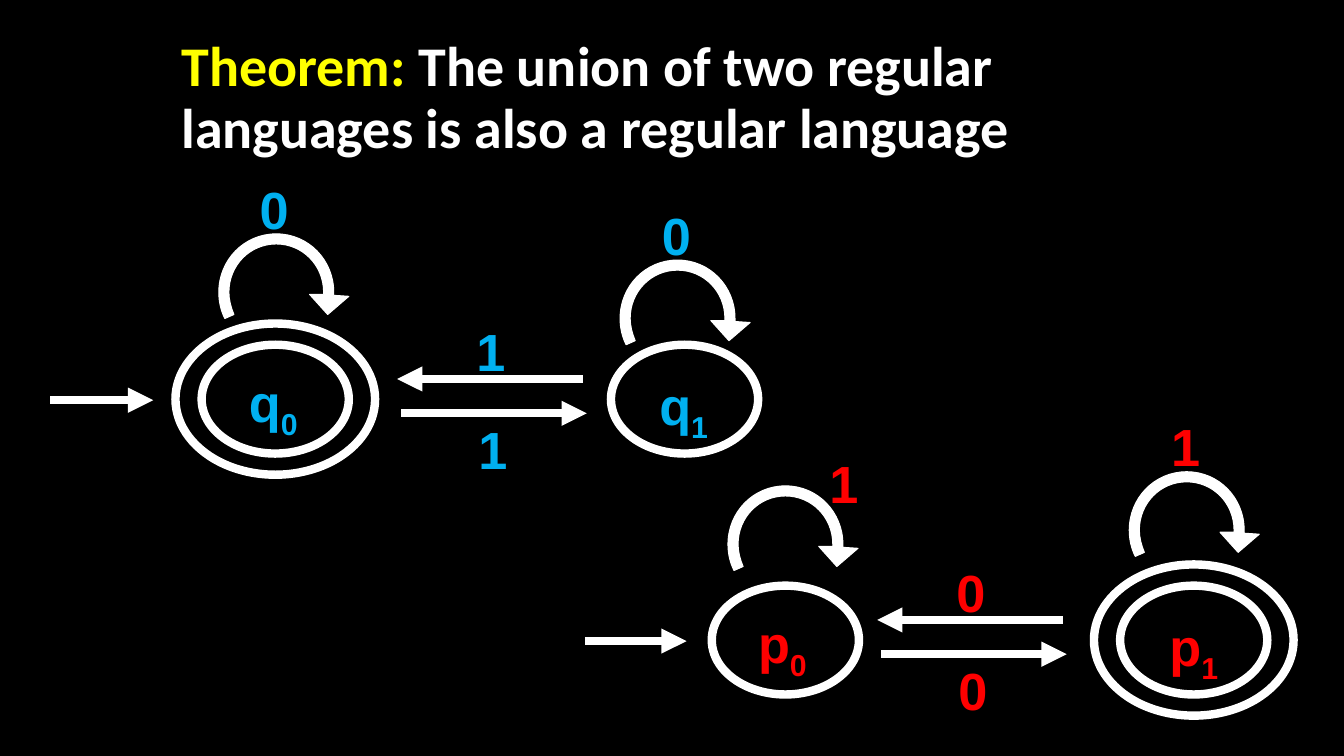
from lxml.etree import SubElement
from pptx import Presentation
from pptx.dml.color import RGBColor
from pptx.enum.shapes import MSO_CONNECTOR, MSO_SHAPE
from pptx.enum.text import MSO_AUTO_SIZE, PP_ALIGN
from pptx.oxml.ns import qn
from pptx.util import Pt

PX = 9144  # 100 px to the inch
THEME = {
    "background": RGBColor(0x00, 0x00, 0x00),
    "ink": RGBColor(0xFF, 0xFF, 0xFF),
    "accent": RGBColor(0xFF, 0xFF, 0x00),
    "q": RGBColor(0x00, 0xB0, 0xF0),
    "p": RGBColor(0xFF, 0x00, 0x00),
    "title_font": "Calibri",
    "label_font": "Arial",
    "title_size": Pt(40),
    "label_size": Pt(37.3),
    "stroke": Pt(6),
    "loop_stroke": Pt(0.75),
}

presentation = Presentation()
presentation.slide_width = 1333 * PX
presentation.slide_height = 750 * PX
slide = presentation.slides.add_slide(presentation.slide_layouts[6])
slide.background.fill.solid()
slide.background.fill.fore_color.rgb = THEME["background"]


def add_text(shapes, text, left, top, width, height=72, color=THEME["ink"],
             lead="", lead_color=None, subscript=False,
             font=THEME["label_font"], size=THEME["label_size"],
             align=PP_ALIGN.CENTER, wrap=False):
    """Add a text box; lead is a first run, and subscript lowers the text after it."""
    box = shapes.add_textbox(left * PX, top * PX, width * PX, height * PX)
    frame = box.text_frame
    frame.word_wrap = wrap
    frame.auto_size = MSO_AUTO_SIZE.SHAPE_TO_FIT_TEXT
    frame.margin_left = frame.margin_right = 13 * PX
    frame.margin_top = frame.margin_bottom = 7 * PX
    paragraph = frame.paragraphs[0]
    paragraph.alignment = align
    paragraph.line_spacing = 0.93
    for words, shade in ((lead, lead_color or color), (text, color)):
        if words:
            run = paragraph.add_run()
            run.text = words
            run.font.name = font
            run.font.size = size
            run.font.bold = True
            run.font.color.rgb = shade
    if subscript:
        run._r.get_or_add_rPr().set("baseline", "-25000")


def add_arrow(shapes, start_x, end_x, y):
    arrow = shapes.add_connector(
        MSO_CONNECTOR.STRAIGHT, start_x * PX, y * PX, end_x * PX, y * PX)
    arrow.line.color.rgb = THEME["ink"]
    arrow.line.width = THEME["stroke"]
    SubElement(arrow.line._get_or_add_ln(), qn("a:tailEnd"), type="triangle")
    SubElement(arrow._element.spPr, qn("a:effectLst"))


add_text(slide.shapes,
         " The union of two regular languages is also a regular language",
         167, 29, 970, 139, lead="Theorem:", lead_color=THEME["accent"],
         font=THEME["title_font"], size=THEME["title_size"],
         align=PP_ALIGN.LEFT, wrap=True)

# Self-loop outline: one point is a straight line, three points are a curve
LOOP_SIZE = 115
LOOP_START = (104, 60)
LOOP_SEGMENTS = [
    [(104, 59), (104, 59), (104, 58)],
    [(104, 31), (83, 10), (57, 10)],
    [(31, 10), (10, 31), (10, 58)],
    [(10, 65), (12, 73), (15, 80)],
    [(6, 84)],
    [(2, 76), (0, 67), (0, 58)],
    [(0, 26), (25, 0), (57, 0)],
    [(89, 0), (114, 26), (114, 58)],
    [(114, 59), (114, 60), (114, 61)],
    [(129, 62)],
    [(108, 80)],
    [(90, 60)],
    [LOOP_START],
]

# Each state: ellipse left, name left, accepting, loop corner, loop label corner
AUTOMATA = [
    {"name": "q", "top": 342, "start": (50, 152), "moves": 394,
     "loop_symbol": "0", "move_symbol": "1",
     "states": [(200, 232, True, (217, 232), (244, 174)),
                (606, 639, False, (615, 258), (643, 200))]},
    {"name": "p", "top": 581, "start": (580, 681), "moves": 870,
     "loop_symbol": "1", "move_symbol": "0",
     "states": [(706, 737, False, (722, 482), (809, 446)),
                (1111, 1145, True, (1120, 468), (1148, 410))]},
]

for automaton in AUTOMATA:
    name, top, moves = automaton["name"], automaton["top"], automaton["moves"]
    color = THEME[name]
    shapes = slide.shapes.add_group_shape().shapes

    for index, state in enumerate(automaton["states"]):
        left, name_left, accepting, (loop_x, loop_y), loop_label = state
        rings = [(left, top, 146, 108)]
        if accepting:
            rings.append((left - 26, top - 21, 198, 150))
        for ring in rings:
            ellipse = shapes.add_shape(
                MSO_SHAPE.OVAL, *(length * PX for length in ring))
            ellipse.shadow.inherit = False
            ellipse.fill.background()
            ellipse.line.color.rgb = THEME["ink"]
            ellipse.line.width = THEME["stroke"]
        add_text(shapes, str(index), name_left, top + 18 + 3 * index, 78,
                 color=color, lead=name, subscript=True)

        builder = shapes.build_freeform(*LOOP_START, scale=PX)
        for segment in LOOP_SEGMENTS:
            builder.add_line_segments(segment, close=False)
        loop = builder.convert_to_shape(loop_x * PX, loop_y * PX)
        outline = next(loop._element.iter(qn("a:path")))
        lines = iter(outline.findall(qn("a:lnTo")))
        for segment in LOOP_SEGMENTS:
            first = next(lines)
            if len(segment) == 3:
                first.tag = qn("a:cubicBezTo")
                for _ in range(2):
                    line = next(lines)
                    first.append(line[0])
                    outline.remove(line)
        SubElement(outline, qn("a:close"))
        for side in ("w", "h"):
            outline.set(side, str(LOOP_SIZE))
        loop.left, loop.top = loop_x * PX, loop_y * PX
        loop.width = loop.height = LOOP_SIZE * PX
        loop.shadow.inherit = False
        loop.fill.solid()
        loop.fill.fore_color.rgb = THEME["ink"]
        loop.line.color.rgb = THEME["ink"]
        loop.line.width = THEME["loop_stroke"]
        add_text(shapes, automaton["loop_symbol"], *loop_label, 56, color=color)

    add_arrow(shapes, *automaton["start"], top + 55)
    add_arrow(shapes, moves + 184, moves, top + 34)
    add_arrow(shapes, moves + 4, moves + 188, top + 68)
    for label_dx, label_dy in ((65, -27), (67, 71)):
        add_text(shapes, automaton["move_symbol"], moves + label_dx,
                 top + label_dy, 56, color=color)

presentation.save("out.pptx")
